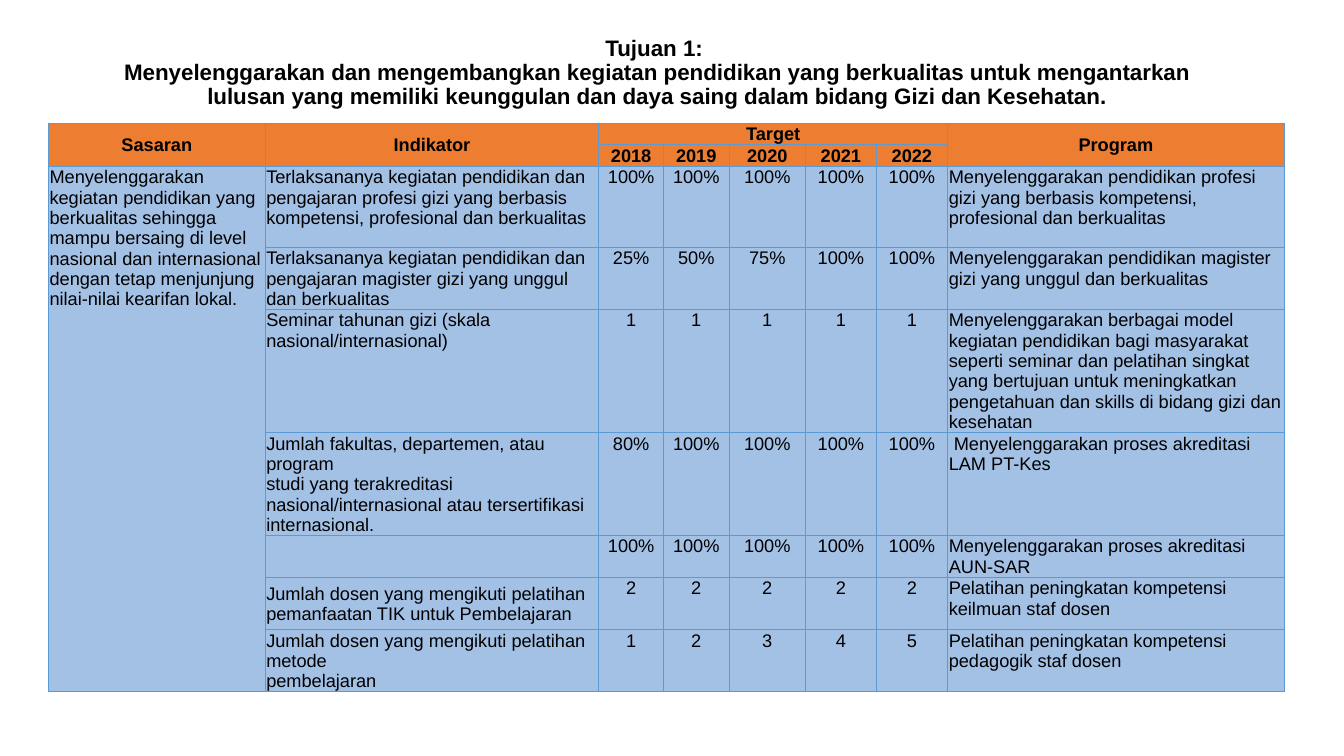
"""Build the slide of targets and programmes for Tujuan 1."""
from copy import deepcopy

from lxml.etree import SubElement
from pptx import Presentation
from pptx.dml.color import RGBColor
from pptx.enum.text import MSO_ANCHOR, MSO_AUTO_SIZE, PP_ALIGN
from pptx.oxml.ns import qn
from pptx.util import Cm, Pt

COLORS = {"text": "000000", "header": "ED7D31", "body": "A3C0E5", "border": "5B9BD5"}
CELL_FORMAT = {"margin_left": Cm(0.03), "margin_right": Cm(0.03),
               "margin_top": Cm(0.03), "margin_bottom": Cm(0)}


def write_text(paragraph, text, size, bold, align):
    paragraph.text = text
    paragraph.alignment = align
    for run in paragraph.runs:
        for name, value in {"name": "Arial", "size": Pt(size), "bold": bold}.items():
            setattr(run.font, name, value)
        run.font.color.rgb = RGBColor.from_string(COLORS["text"])
    for line_break in paragraph._p.findall(qn("a:br")):
        line_break.append(deepcopy(paragraph.runs[0]._r.rPr))


def draw_borders(cell):
    properties = cell._tc.get_or_add_tcPr()
    for side in ("lnL", "lnR", "lnT", "lnB"):
        border = SubElement(properties, qn(f"a:{side}"), w=str(Pt(0.5)))
        fill = SubElement(border, qn("a:solidFill"))
        SubElement(fill, qn("a:srgbClr"), val=COLORS["border"])


presentation = Presentation()
presentation.slide_width = Cm(33.87)
presentation.slide_height = Cm(19.05)
slide = presentation.slides.add_slide(presentation.slide_layouts[5])

goal = slide.shapes.title
for name, value in {"left": Cm(1.96), "top": Cm(0.89), "width": Cm(29.21), "height": Cm(1.9)}.items():
    setattr(goal, name, value)
for name, value in {"word_wrap": True, "auto_size": MSO_AUTO_SIZE.NONE,
                    "vertical_anchor": MSO_ANCHOR.MIDDLE}.items():
    setattr(goal.text_frame, name, value)
goal_text = goal.text_frame.paragraphs[0]
write_text(
    goal_text,
    "Tujuan 1: \vMenyelenggarakan dan mengembangkan kegiatan pendidikan yang berkualitas "
    "untuk mengantarkan lulusan yang memiliki keunggulan dan daya saing dalam bidang Gizi dan Kesehatan.",
    16, True, PP_ALIGN.CENTER)
goal_text.line_spacing = 0.9

sasaran = ("Menyelenggarakan kegiatan pendidikan yang berkualitas sehingga mampu bersaing di level "
           "nasional dan internasional dengan tetap menjunjung nilai-nilai kearifan lokal.")
rows = [
    ["Sasaran", "Indikator", "Target", "", "", "", "", "Program"],
    ["", "", "2018", "2019", "2020", "2021", "2022", ""],
    [sasaran,
     "Terlaksananya kegiatan pendidikan dan pengajaran profesi gizi yang berbasis kompetensi, "
     "profesional dan berkualitas",
     "100%", "100%", "100%", "100%", "100%",
     "Menyelenggarakan pendidikan profesi gizi yang berbasis kompetensi, profesional dan berkualitas"],
    ["",
     "Terlaksananya kegiatan pendidikan dan pengajaran magister gizi yang unggul dan berkualitas",
     "25%", "50%", "75%", "100%", "100%",
     "Menyelenggarakan pendidikan magister gizi yang unggul dan berkualitas"],
    ["", "Seminar tahunan gizi (skala nasional/internasional)",
     "1", "1", "1", "1", "1",
     "Menyelenggarakan berbagai model kegiatan pendidikan bagi masyarakat seperti seminar dan "
     "pelatihan singkat yang bertujuan untuk meningkatkan pengetahuan dan skills di bidang gizi "
     "dan kesehatan"],
    ["",
     "Jumlah fakultas, departemen, atau program\vstudi yang terakreditasi nasional/internasional "
     "atau tersertifikasi internasional.",
     "80%", "100%", "100%", "100%", "100%",
     " Menyelenggarakan proses akreditasi LAM PT-Kes"],
    ["", "", "100%", "100%", "100%", "100%", "100%",
     "Menyelenggarakan proses akreditasi AUN-SAR"],
    ["", "Jumlah dosen yang mengikuti pelatihan\vpemanfaatan TIK untuk Pembelajaran",
     "2", "2", "2", "2", "2", "Pelatihan peningkatan kompetensi keilmuan staf dosen"],
    ["", "Jumlah dosen yang mengikuti pelatihan metode\vpembelajaran",
     "1", "2", "3", "4", "5", "Pelatihan peningkatan kompetensi pedagogik staf dosen"],
]
column_widths = [5.46, 8.41, 1.63, 1.65, 1.93, 1.78, 1.8, 8.48]
row_heights = [0.52, 0.52, 2.04, 1.54, 3.1, 2.57, 1.03, 1.32, 1.54]
merges = [(0, 0, 1, 0), (0, 1, 1, 1), (0, 2, 0, 6), (0, 7, 1, 7), (2, 0, 8, 0)]
middle_cells = {(0, 0), (0, 1), (0, 7), (5, 1), (6, 7), (7, 1), (8, 1)}

targets = slide.shapes.add_table(
    len(rows), len(column_widths), Cm(1.22), Cm(3.1),
    Cm(sum(column_widths)), Cm(sum(row_heights))).table
targets.horz_banding = False
for column, width in zip(targets.columns, column_widths):
    column.width = Cm(width)
for row, height in zip(targets.rows, row_heights):
    row.height = Cm(height)
for top, left, bottom, right in merges:
    targets.cell(top, left).merge(targets.cell(bottom, right))

for row_index, texts in enumerate(rows):
    is_header = row_index < 2
    for column_index, text in enumerate(texts):
        cell = targets.cell(row_index, column_index)
        for name, value in CELL_FORMAT.items():
            setattr(cell, name, value)
        is_middle = (row_index, column_index) in middle_cells
        cell.vertical_anchor = MSO_ANCHOR.MIDDLE if is_middle else MSO_ANCHOR.TOP
        draw_borders(cell)
        cell.fill.solid()
        cell.fill.fore_color.rgb = RGBColor.from_string(COLORS["header" if is_header else "body"])
        is_centered = is_header or 2 <= column_index <= 6
        write_text(cell.text_frame.paragraphs[0], text, 13, is_header,
                   PP_ALIGN.CENTER if is_centered else PP_ALIGN.LEFT)

presentation.save("out.pptx")
